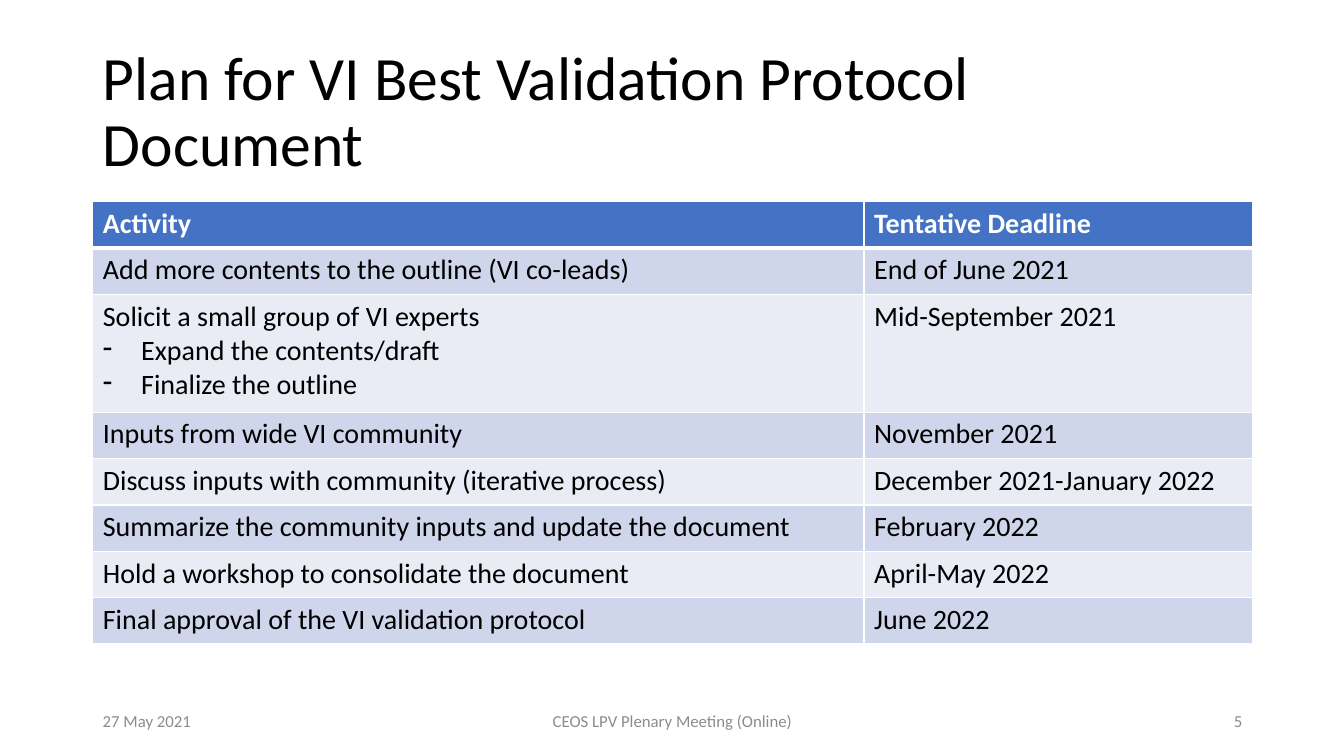
import pptx
import pptx.dml.color
import pptx.enum.text
import pptx.oxml.ns
import pptx.util
from lxml import etree

PX = 9144  # EMU; 100 px to the inch
FONT = "Calibri"
COLORS = {
    "text": "000000",
    "white": "FFFFFF",
    "footer": "8C8C8C",
    "header": "4472C4",
    "odd_row": "CFD5EA",
    "even_row": "E9EBF5",
}
ALIGN = pptx.enum.text.PP_ALIGN
LEFT, CONTENT_WIDTH = 92, 1150
COLUMN_WIDTHS = (765, 385)
ROW_HEIGHT, LIST_ROW_HEIGHT = 46, 117
DASH_INDENT = 38

# Lines after the first in an activity are its dashed sub-items.
SCHEDULE = [
    ("Activity", "Tentative Deadline"),
    ("Add more contents to the outline (VI co-leads)", "End of June 2021"),
    ("Solicit a small group of VI experts\nExpand the contents/draft\nFinalize the outline",
     "Mid-September 2021"),
    ("Inputs from wide VI community", "November 2021"),
    ("Discuss inputs with community (iterative process)", "December 2021-January 2022"),
    ("Summarize the community inputs and update the document", "February 2022"),
    ("Hold a workshop to consolidate the document", "April-May 2022"),
    ("Final approval of the VI validation protocol", "June 2022"),
]
FOOTERS = [
    (92, 300, "27 May 2021", ALIGN.LEFT),
    (442, 450, "CEOS LPV Plenary Meeting (Online)", ALIGN.CENTER),
    (942, 300, "5", ALIGN.RIGHT),
]


def px(length):
    return pptx.util.Emu(length * PX)


def rgb(name):
    return pptx.dml.color.RGBColor.from_string(COLORS[name])


def format_runs(text_frame, size, color, bold=False):
    for paragraph in text_frame.paragraphs:
        for run in paragraph.runs:
            run.font.name = FONT
            run.font.size = pptx.util.Pt(size)
            run.font.bold = bold
            run.font.color.rgb = rgb(color)


def add_text(slide, box, text, size, color, align=ALIGN.LEFT, line_spacing=1.0):
    frame = slide.shapes.add_textbox(*map(px, box)).text_frame
    frame.word_wrap = True
    frame.vertical_anchor = pptx.enum.text.MSO_ANCHOR.MIDDLE
    frame.text = text
    frame.paragraphs[0].alignment = align
    frame.paragraphs[0].line_spacing = line_spacing
    format_runs(frame, size, color)


def add_dash(paragraph):
    properties = paragraph._p.get_or_add_pPr()
    properties.set("marL", str(px(DASH_INDENT)))
    properties.set("indent", str(-px(DASH_INDENT)))
    bullet = etree.SubElement(properties, pptx.oxml.ns.qn("a:buChar"))
    bullet.set("char", "-")


def set_borders(cell, top, bottom):
    """Draw white cell borders; top and bottom are widths in points."""
    properties = cell._tc.get_or_add_tcPr()
    for side, width in (("L", 1), ("R", 1), ("T", top), ("B", bottom)):
        line = etree.SubElement(properties, pptx.oxml.ns.qn(f"a:ln{side}"))
        line.set("w", str(pptx.util.Pt(width)))
        fill = etree.SubElement(line, pptx.oxml.ns.qn("a:solidFill"))
        color = etree.SubElement(fill, pptx.oxml.ns.qn("a:srgbClr"))
        color.set("val", COLORS["white"])


def fill_cell(cell, text, row_index):
    is_header = row_index == 0
    # Borders must come before the fill in the cell properties.
    set_borders(cell, top=3 if row_index == 1 else 1, bottom=3 if is_header else 1)
    band = "header" if is_header else "odd_row" if row_index % 2 else "even_row"
    cell.fill.solid()
    cell.fill.fore_color.rgb = rgb(band)
    cell.text_frame.text = text
    for sub_item in cell.text_frame.paragraphs[1:]:
        add_dash(sub_item)
    format_runs(cell.text_frame, 20, "white" if is_header else "text", is_header)


def add_schedule(slide):
    heights = [LIST_ROW_HEIGHT if "\n" in activity else ROW_HEIGHT for activity, _ in SCHEDULE]
    schedule = slide.shapes.add_table(
        len(SCHEDULE), len(COLUMN_WIDTHS),
        px(LEFT), px(200), px(CONTENT_WIDTH), px(sum(heights))).table
    for column, width in zip(schedule.columns, COLUMN_WIDTHS):
        column.width = px(width)
    for row_index, (row, height, texts) in enumerate(zip(schedule.rows, heights, SCHEDULE)):
        row.height = px(height)
        for cell, text in zip(row.cells, texts):
            fill_cell(cell, text, row_index)


def main():
    presentation = pptx.Presentation()
    presentation.slide_width, presentation.slide_height = px(1333), px(750)
    slide = presentation.slides.add_slide(presentation.slide_layouts[6])
    add_text(slide, (LEFT, 40, CONTENT_WIDTH, 145),
             "Plan for VI Best Validation Protocol Document", 44, "text", line_spacing=0.9)
    add_schedule(slide)
    for left, width, text, align in FOOTERS:
        add_text(slide, (left, 695, width, 40), text, 12, "footer", align)
    presentation.save("out.pptx")


if __name__ == "__main__":
    main()
